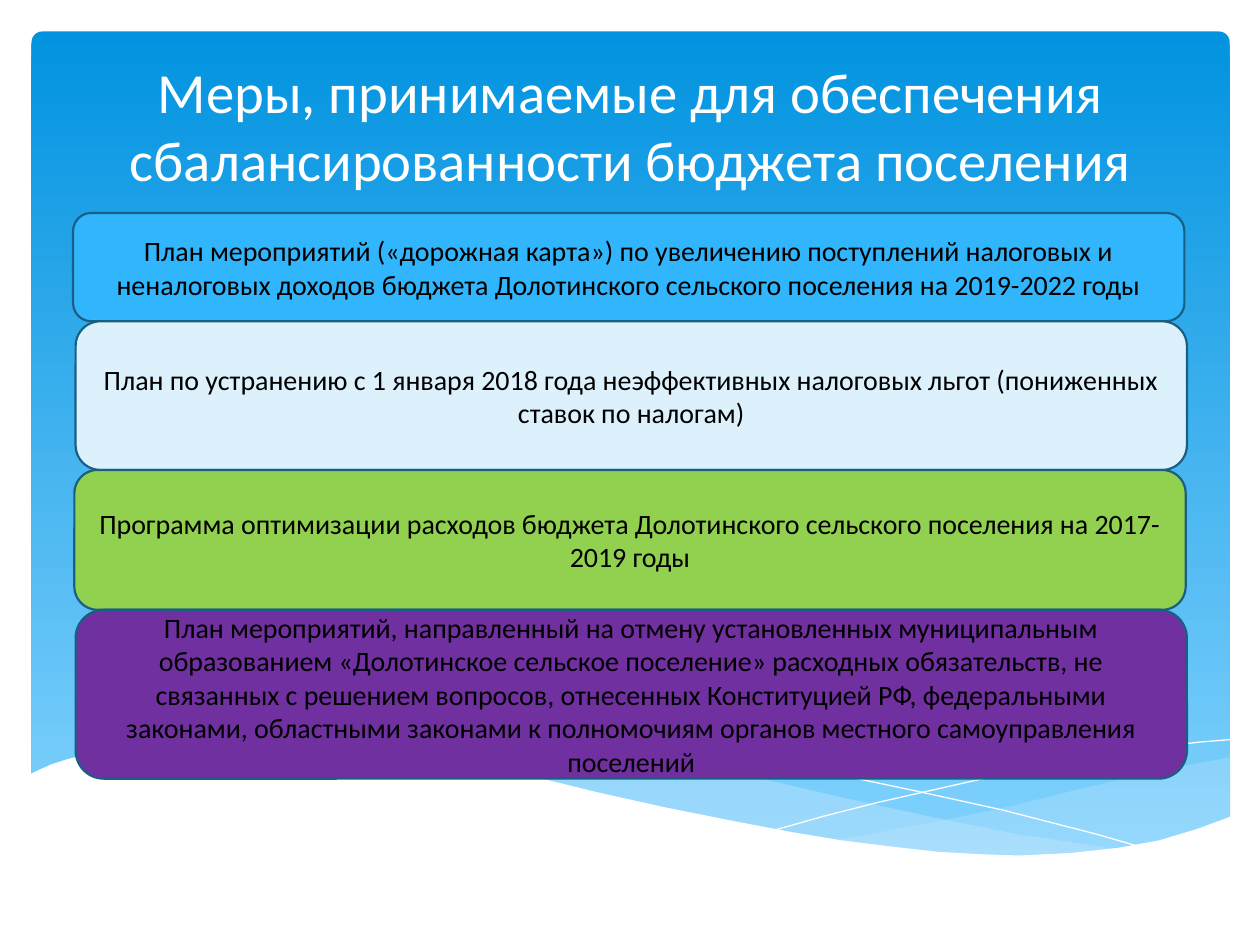
"""Build a slide of four stacked budget-balance measures on a wavy blue backdrop."""
from dataclasses import dataclass

from lxml import etree
from pptx import Presentation
from pptx.dml.color import RGBColor
from pptx.enum.shapes import MSO_SHAPE
from pptx.enum.text import MSO_ANCHOR, MSO_AUTO_SIZE, PP_ALIGN
from pptx.oxml.ns import qn
from pptx.util import Inches, Pt

ROUNDED = MSO_SHAPE.ROUNDED_RECTANGLE
CENTER = PP_ALIGN.CENTER
BOTTOM, MIDDLE = MSO_ANCHOR.BOTTOM, MSO_ANCHOR.MIDDLE
NO_FIT = MSO_AUTO_SIZE.NONE

WHITE = RGBColor(0xFF, 0xFF, 0xFF)
BLACK = RGBColor(0x00, 0x00, 0x00)
SKY_TOP = RGBColor(0x02, 0x93, 0xE0)
SKY_BOTTOM = RGBColor(0x83, 0xD3, 0xFE)
MIST = RGBColor(0xC6, 0xE7, 0xFC)
OUTLINE = RGBColor(0x19, 0x5F, 0x84)
AZURE = RGBColor(0x31, 0xB6, 0xFD)
PALE_BLUE = RGBColor(0xDD, 0xF1, 0xFD)
GREEN = RGBColor(0x92, 0xD0, 0x50)
PURPLE = RGBColor(0x70, 0x30, 0xA0)

FONT = "Calibri"
COLUMNS, ROWS = 1000, 750
CELL = Inches(0.01)
CARD_TOP, CARD_WIDTH = 169, 882
TITLE = "Меры, принимаемые для обеспечения сбалансированности бюджета поселения"


@dataclass(frozen=True)
class Wave:
    """A filled band, given as grid points and an opacity in percent."""
    points: tuple
    color: RGBColor
    opacity: int = 100


@dataclass(frozen=True)
class Card:
    """One measure of the stack, with left and height in grid cells."""
    left: int
    height: int
    color: RGBColor
    text: str


WAVES = (
    Wave(((976, 601), (950, 606), (922, 611), (892, 618), (862, 625), (806, 639),
          (754, 650), (707, 659), (662, 667), (692, 671), (719, 674), (746, 677),
          (770, 679), (804, 680), (836, 679), (864, 677), (890, 674), (914, 669),
          (937, 663), (951, 659), (977, 649), (977, 601)), MIST, 29),
    Wave(((894, 675), (867, 671), (808, 662), (742, 649), (669, 633), (630, 624),
          (584, 613), (542, 604), (502, 598), (465, 593), (420, 589), (380, 587),
          (345, 588), (314, 590), (287, 593), (323, 598), (363, 604), (405, 613),
          (450, 624), (530, 642), (602, 657), (651, 666), (696, 672), (737, 677),
          (774, 679), (808, 680), (839, 680), (868, 678), (894, 675)), MIST, 40),
)
RIBBONS = (
    ((310, 597), (329, 594), (353, 591), (388, 589), (433, 589), (469, 590),
     (511, 594), (557, 598), (609, 606), (666, 615), (728, 628), (796, 643),
     (870, 662), (908, 673)),
    ((614, 659), (653, 648), (696, 637), (749, 625), (807, 612), (867, 600),
     (897, 596), (925, 592), (952, 589), (976, 587)),
)
FOREGROUND = Wave(
    ((977, 648), (950, 658), (920, 667), (887, 673), (850, 677), (809, 679),
     (778, 678), (744, 676), (708, 672), (668, 667), (626, 660), (579, 651),
     (529, 641), (475, 629), (418, 615), (365, 604), (316, 596), (271, 590),
     (230, 587), (193, 586), (161, 586), (132, 588), (106, 591), (85, 595),
     (67, 599), (52, 603), (40, 607), (29, 612), (23, 615), (23, 731), (977, 731)),
    WHITE)

CARDS = (
    Card(58, 86, AZURE,
         "План мероприятий («дорожная карта») по увеличению поступлений налоговых и "
         "неналоговых доходов бюджета Долотинского сельского поселения на 2019-2022 годы"),
    Card(60, 118, PALE_BLUE,
         "План по устранению с 1 января 2018 года неэффективных налоговых льгот "
         "(пониженных ставок по налогам)"),
    Card(59, 111, GREEN,
         "Программа оптимизации расходов бюджета Долотинского сельского поселения "
         "на 2017-2019 годы"),
    Card(60, 134, PURPLE,
         "План мероприятий, направленный на отмену установленных муниципальным "
         "образованием «Долотинское сельское поселение» расходных обязательств, не "
         "связанных с решением вопросов, отнесенных Конституцией РФ, федеральными "
         "законами, областными законами к полномочиям органов местного самоуправления "
         "поселений"),
)


def write(shape, text: str, size: float, color: RGBColor, anchor) -> None:
    """Put one centred paragraph into a shape."""
    frame = shape.text_frame
    frame.text = text
    frame.word_wrap = True
    frame.auto_size = NO_FIT
    frame.vertical_anchor = anchor
    para = frame.paragraphs[0]
    para.alignment = CENTER
    para.font.name = FONT
    para.font.size = Pt(size)
    para.font.color.rgb = color


def add_rounded(page, left: int, top: int, width: int, height: int):
    """Add a shadowless rounded box placed on the grid."""
    box = page.shapes.add_shape(ROUNDED, *(CELL * n for n in (left, top, width, height)))
    box.shadow.inherit = False
    return box


def add_outline(page, points: tuple, closed: bool):
    """Add a shadowless freeform through grid points."""
    builder = page.shapes.build_freeform(*points[0], scale=CELL)
    builder.add_line_segments(points[1:], close=closed)
    shape = builder.convert_to_shape()
    shape.shadow.inherit = False
    return shape


def add_wave(page, wave: Wave) -> None:
    """Draw a filled band without an outline."""
    shape = add_outline(page, wave.points, True)
    shape.fill.solid()
    shape.fill.fore_color.rgb = wave.color
    shape.line.fill.background()
    if wave.opacity < 100:
        color = shape.fill._xPr.find(qn("a:solidFill"))[0]
        etree.SubElement(color, qn("a:alpha")).set("val", str(wave.opacity * 1000))


def add_ribbon(page, points: tuple) -> None:
    """Draw a white hairline curve."""
    shape = add_outline(page, points, False)
    shape.fill.background()
    shape.line.color.rgb = WHITE
    shape.line.width = Pt(0)


def add_backdrop(page) -> None:
    """Draw the gradient panel and the waves over it."""
    panel = add_rounded(page, 25, 25, 951, 660)
    panel.adjustments[0] = 0.013
    panel.line.fill.background()
    panel.fill.gradient()
    panel.fill.gradient_angle = 270
    for stop, color in zip(panel.fill.gradient_stops, (SKY_TOP, SKY_BOTTOM)):
        stop.color.rgb = color
    for wave in WAVES:
        add_wave(page, wave)
    for points in RIBBONS:
        add_ribbon(page, points)
    add_wave(page, FOREGROUND)


def add_title(page) -> None:
    """Place the title placeholder in front of the backdrop."""
    title = page.shapes.title
    title.left, title.top, title.width, title.height = (
        CELL * n for n in (28, 29, 945, 129))
    write(title, TITLE, 32.4, WHITE, BOTTOM)
    page.shapes._spTree.append(title._element)


def add_card(page, card: Card, top: int) -> None:
    """Draw one measure of the stack."""
    box = add_rounded(page, card.left, top, CARD_WIDTH, card.height)
    box.fill.solid()
    box.fill.fore_color.rgb = card.color
    box.line.color.rgb = OUTLINE
    box.line.width = Pt(1.25)
    write(box, card.text, 16, BLACK, MIDDLE)


def main() -> None:
    """Build and save the deck."""
    deck = Presentation()
    deck.slide_width, deck.slide_height = CELL * COLUMNS, CELL * ROWS
    page = deck.slides.add_slide(deck.slide_layouts.get_by_name("Title Only"))
    add_backdrop(page)
    add_title(page)
    top = CARD_TOP
    for card in CARDS:
        add_card(page, card, top)
        top += card.height
    deck.save("out.pptx")


if __name__ == "__main__":
    main()
